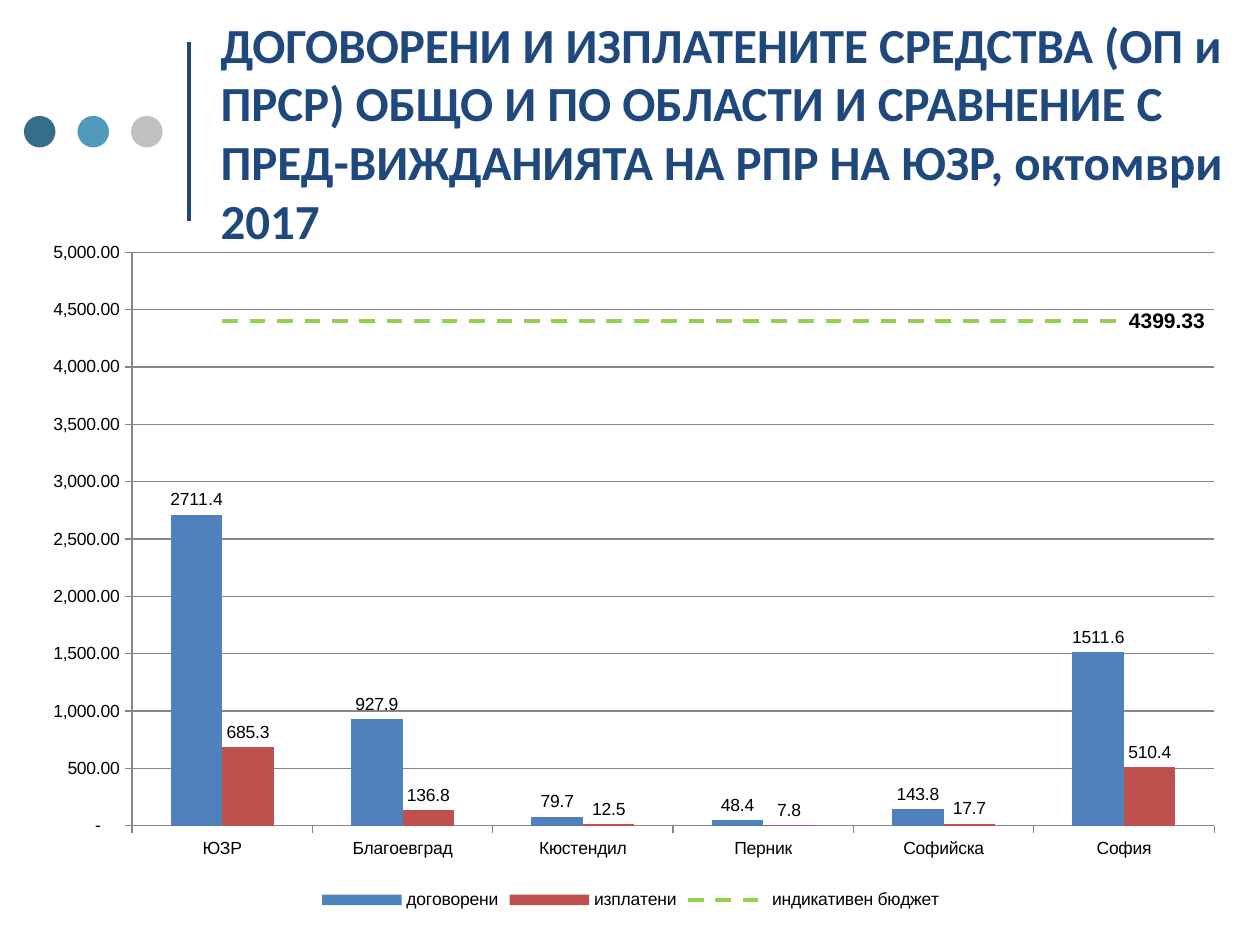
"""Builds a slide comparing contracted and paid funds by region with the indicative budget."""
from lxml import etree
from pptx import Presentation
from pptx.chart.data import CategoryChartData
from pptx.dml.color import RGBColor
from pptx.enum.chart import XL_CHART_TYPE, XL_LABEL_POSITION, XL_LEGEND_POSITION, XL_MARKER_STYLE, XL_TICK_MARK
from pptx.enum.dml import MSO_LINE
from pptx.enum.shapes import MSO_CONNECTOR, MSO_SHAPE
from pptx.enum.text import MSO_ANCHOR, MSO_AUTO_SIZE, PP_ALIGN
from pptx.oxml import parse_xml
from pptx.oxml.ns import nsdecls, qn
from pptx.util import Inches, Pt

COLUMNS = XL_CHART_TYPE.COLUMN_CLUSTERED
OUTSIDE, RIGHT = XL_LABEL_POSITION.OUTSIDE_END, XL_LABEL_POSITION.RIGHT

TITLE = ("ДОГОВОРЕНИ И ИЗПЛАТЕНИТЕ СРЕДСТВА (ОП и ПРСР) ОБЩО И ПО ОБЛАСТИ "
         "И СРАВНЕНИЕ С ПРЕД-ВИЖДАНИЯТА НА РПР НА ЮЗР, октомври 2017")
REGIONS = ["ЮЗР", "Благоевград", "Кюстендил", "Перник", "Софийска", "София"]
SERIES = {
    "договорени": [2711.4, 927.9, 79.7, 48.4, 143.8, 1511.6],
    "изплатени": [685.3, 136.8, 12.5, 7.8, 17.7, 510.4],
    "индикативен бюджет": [4399.33] * len(REGIONS),
}
THEME = {
    "title_font": "Calibri", "title_size": 28, "title": "1F497D",
    "chart_font": "Arial", "chart_size": 10, "budget_size": 12, "text": "000000",
    "columns": ["4F81BD", "C0504D"], "budget": "92D050", "grid": "868686",
    "dots": ["356E8B", "5098BC", "C0C0C0"],
}
PLOT_AREA = {"x": 0.09, "y": 0.03, "w": 0.89, "h": 0.84}


def color(value):
    return RGBColor.from_string(value)


def style_font(font, name, size, value, bold=False):
    font.name, font.size, font.bold = name, Pt(size), bold
    font.color.rgb = color(value)


def strip_effects(connector):
    etree.SubElement(connector._element.spPr, qn("a:effectLst"))


def add_heading(slide):
    title = slide.shapes.title
    title.left, title.top, title.width, title.height = map(Inches, (1.67, 0.21, 8.21, 1.67))
    frame = title.text_frame
    frame.text = TITLE
    frame.word_wrap, frame.auto_size = True, MSO_AUTO_SIZE.NONE
    frame.vertical_anchor = MSO_ANCHOR.MIDDLE
    frame.margin_left = frame.margin_right = frame.margin_top = frame.margin_bottom = Inches(0.08)
    paragraph = frame.paragraphs[0]
    paragraph.alignment = PP_ALIGN.LEFT
    style_font(paragraph.font, THEME["title_font"], THEME["title_size"], THEME["title"], True)


def add_decoration(slide):
    rule = slide.shapes.add_connector(
        MSO_CONNECTOR.STRAIGHT, Inches(1.5), Inches(1.75), Inches(1.5), Inches(0.33))
    rule.line.color.rgb, rule.line.width = color(THEME["title"]), Pt(2)
    strip_effects(rule)
    for index, fill in enumerate(THEME["dots"]):
        dot = slide.shapes.add_shape(
            MSO_SHAPE.OVAL, Inches(0.19 + index * 0.425), Inches(0.92), Inches(0.25), Inches(0.25))
        dot.shadow.inherit = False
        dot.fill.solid()
        dot.fill.fore_color.rgb = color(fill)
        dot.line.fill.background()


def move_last_series_to_line(chart):
    bar_chart = chart.plots[0]._element
    series = bar_chart.findall(qn("c:ser"))[-1]
    for bar_only in series.findall(qn("c:invertIfNegative")):
        series.remove(bar_only)
    line_chart = parse_xml(f'<c:lineChart {nsdecls("c")}><c:grouping val="standard"/>'
                           '<c:varyColors val="0"/></c:lineChart>')
    line_chart.append(series)
    etree.SubElement(line_chart, qn("c:marker")).set("val", "1")
    for axis in bar_chart.findall(qn("c:axId")):
        etree.SubElement(line_chart, qn("c:axId")).set("val", axis.get("val"))
    bar_chart.addnext(line_chart)


def set_plot_area(chart):
    sizes = "".join(f'<c:{key} val="{value}"/>' for key, value in PLOT_AREA.items())
    layout = parse_xml(
        f'<c:layout {nsdecls("c")}><c:manualLayout><c:layoutTarget val="inner"/>'
        f'<c:xMode val="edge"/><c:yMode val="edge"/>{sizes}</c:manualLayout></c:layout>')
    plot_area = chart._chartSpace.chart.plotArea
    for old in plot_area.findall(qn("c:layout")):
        plot_area.remove(old)
    plot_area.insert(0, layout)


def style_axes(chart):
    for axis in (chart.category_axis, chart.value_axis):
        axis.major_tick_mark, axis.minor_tick_mark = XL_TICK_MARK.OUTSIDE, XL_TICK_MARK.NONE
        axis.format.line.color.rgb = color(THEME["grid"])
    values = chart.value_axis
    values.minimum_scale, values.maximum_scale, values.major_unit = 0, 5000, 500
    values.tick_labels.number_format = '#,##0.00;-#,##0.00;"-"_0_0'
    values.tick_labels.number_format_is_linked = False
    values.major_gridlines.format.line.color.rgb = color(THEME["grid"])


def style_series(chart):
    columns, line = chart.plots
    columns.gap_width, columns.overlap, columns.vary_by_categories = 150, 0, False
    for series, fill in zip(columns.series, THEME["columns"]):
        series.format.fill.solid()
        series.format.fill.fore_color.rgb = color(fill)
        series.data_labels.show_value = True
        series.data_labels.position = OUTSIDE
    budget = line.series[0]
    budget.smooth = False
    budget.marker.style = XL_MARKER_STYLE.NONE
    stroke = budget.format.line
    stroke.color.rgb, stroke.width, stroke.dash_style = color(THEME["budget"]), Pt(2.25), MSO_LINE.DASH
    budget.data_labels.show_value = False
    label = budget.points[len(REGIONS) - 1].data_label
    style_font(label.font, THEME["chart_font"], THEME["budget_size"], THEME["text"], True)
    label.position = RIGHT


def add_funds_chart(slide):
    data = CategoryChartData()
    data.categories = REGIONS
    for name, values in SERIES.items():
        data.add_series(name, values)
    chart = slide.shapes.add_chart(
        COLUMNS, Inches(0.18), Inches(1.84), Inches(9.65), Inches(5.42), data).chart
    chart.has_title = False
    style_font(chart.font, THEME["chart_font"], THEME["chart_size"], THEME["text"])
    chart.has_legend = True
    chart.legend.position, chart.legend.include_in_layout = XL_LEGEND_POSITION.BOTTOM, False
    move_last_series_to_line(chart)
    set_plot_area(chart)
    style_axes(chart)
    style_series(chart)


def main():
    presentation = Presentation()
    presentation.slide_width, presentation.slide_height = Inches(10), Inches(7.5)
    slide = presentation.slides.add_slide(presentation.slide_layouts[5])
    add_decoration(slide)
    add_heading(slide)
    add_funds_chart(slide)
    presentation.save("out.pptx")


if __name__ == "__main__":
    main()
